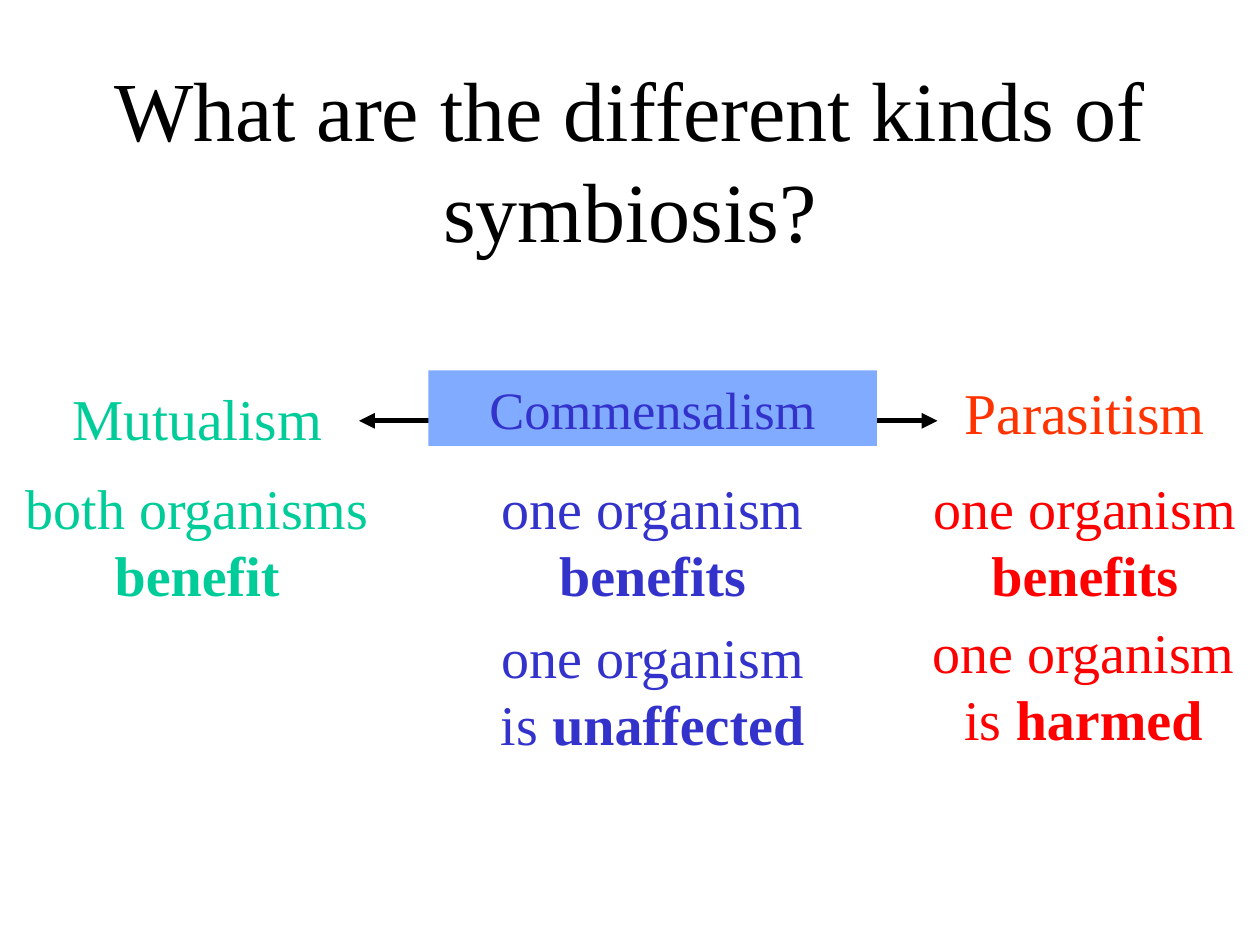
from dataclasses import dataclass

from lxml.etree import SubElement
from pptx import Presentation
from pptx.dml.color import RGBColor
from pptx.enum.shapes import MSO_CONNECTOR as Connector, MSO_SHAPE as Shape
from pptx.enum.text import MSO_ANCHOR as Anchor, MSO_AUTO_SIZE as AutoSize, PP_ALIGN as Align
from pptx.oxml.ns import qn
from pptx.util import Inches, Pt


@dataclass(frozen=True)
class Theme:
    font: str = "Times New Roman"
    black: str = "000000"
    green: str = "00CC99"
    orange: str = "FF3300"
    red: str = "FF0000"
    indigo: str = "3333CC"
    label_fill: str = "81ABFF"
    title_size: int = 48
    kind_size: int = 33
    label_size: int = 30
    body_size: int = 32


THEME = Theme()


def write_text(shape, text, *, color, size, bold_end="", anchor=Anchor.TOP,
               wrap=True, fit=AutoSize.NONE):
    frame = shape.text_frame
    frame.word_wrap = wrap
    frame.auto_size = fit
    frame.vertical_anchor = anchor
    paragraph = frame.paragraphs[0]
    paragraph.alignment = Align.CENTER
    for words, bold in ((text, False), (bold_end, True)):
        if words:
            run = paragraph.add_run()
            run.text = words
            run.font.name = THEME.font
            run.font.size = Pt(size)
            run.font.bold = bold
            run.font.color.rgb = RGBColor.from_string(color)


def fill_placeholder(placeholder, box, text, **text_format):
    placeholder.left, placeholder.top, placeholder.width, placeholder.height = map(Inches, box)
    write_text(placeholder, text, **text_format)


def add_text(slide, box, text, **text_format):
    textbox = slide.shapes.add_textbox(*map(Inches, box))
    write_text(textbox, text, fit=AutoSize.SHAPE_TO_FIT_TEXT, **text_format)


def add_label(slide, box, text):
    label = slide.shapes.add_shape(Shape.RECTANGLE, *map(Inches, box))
    label.shadow.inherit = False
    label.fill.solid()
    label.fill.fore_color.rgb = RGBColor.from_string(THEME.label_fill)
    label.line.fill.background()
    write_text(label, text, color=THEME.indigo, size=THEME.label_size,
               fit=AutoSize.SHAPE_TO_FIT_TEXT)


def add_double_arrow(slide, left, right, y):
    arrow = slide.shapes.add_connector(
        Connector.STRAIGHT, Inches(left), Inches(y), Inches(right), Inches(y))
    arrow.line.color.rgb = RGBColor.from_string(THEME.black)
    arrow.line.width = Pt(3)
    for end in ("a:headEnd", "a:tailEnd"):
        SubElement(arrow.line._get_or_add_ln(), qn(end), type="triangle")
    SubElement(arrow._element.spPr, qn("a:effectLst"))


def main():
    presentation = Presentation()
    presentation.slide_width, presentation.slide_height = Inches(10), Inches(7.5)
    slide = presentation.slides.add_slide(presentation.slide_layouts[0])
    title, parasitism = slide.placeholders

    fill_placeholder(title, (0.75, 0.33, 8.5, 1.85),
                     "What are the different kinds of symbiosis?",
                     color=THEME.black, size=THEME.title_size, anchor=Anchor.MIDDLE)
    add_text(slide, (0.47, 2.99, 2.19, 0.65), "Mutualism",
             color=THEME.green, size=THEME.kind_size, wrap=False)
    fill_placeholder(parasitism, (7.15, 2.94, 2.92, 0.75), "Parasitism",
                     color=THEME.orange, size=THEME.kind_size)
    add_double_arrow(slide, 2.85, 7.44, 3.34)
    add_label(slide, (3.4, 2.94, 3.56, 0.6), "Commensalism")

    effects = (
        ((-0.04, 3.71, 3.21, 1.17), "both organisms ", "benefit", THEME.green),
        ((7.22, 3.71, 2.78, 1.17), "one organism ", "benefits", THEME.red),
        ((3.78, 3.71, 2.8, 1.17), "one organism ", "benefits", THEME.indigo),
        ((3.87, 4.89, 2.62, 1.57), "one organism is ", "unaffected", THEME.indigo),
        ((7.3, 4.85, 2.6, 1.7), "one organism is ", "harmed", THEME.red),
    )
    for box, organisms, outcome, color in effects:
        add_text(slide, box, organisms, bold_end=outcome, color=color, size=THEME.body_size)

    presentation.save("out.pptx")


if __name__ == "__main__":
    main()
